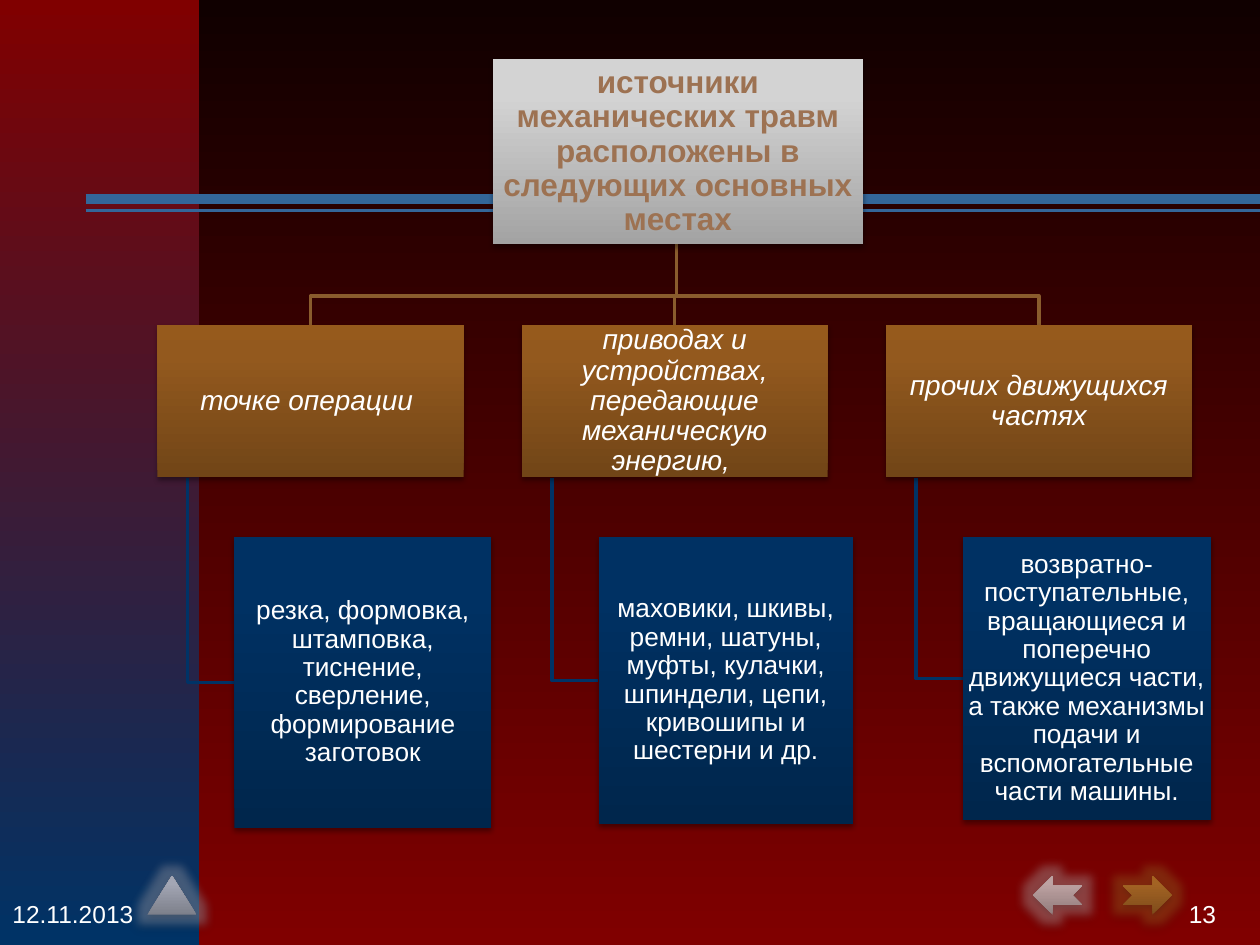
from lxml import etree
from pptx import Presentation
from pptx.dml.color import RGBColor
from pptx.enum import shapes as sh, text as tx
from pptx.oxml.ns import qn
from pptx.util import Inches, Pt

ROOT_TEXT = "источники механических травм расположены в следующих основных местах"
# place, its example sources, size of the example box
BRANCHES = [
    ("точке операции ",
     "резка, формовка, штамповка, тиснение, сверление, формирование заготовок",
     (2.04, 2.31)),
    ("приводах и устройствах, передающие механическую энергию, ",
     "маховики, шкивы, ремни, шатуны, муфты, кулачки, шпиндели, цепи, "
     "кривошипы и шестерни и др.",
     (2.02, 2.28)),
    ("прочих движущихся частях",
     "возвратно-поступательные, вращающиеся и поперечно движущиеся части, "
     "а также механизмы подачи и вспомогательные части машины.",
     (1.97, 2.25)),
]
# gradient stops, from the bottom up
SILVER = [(0, "A3A3A3"), (80, "D3D3D3"), (100, "D4D4D4")]
BROWN = [(0, "714517"), (80, "93591E"), (100, "965A1C")]
NAVY = [(0, "00264C"), (80, "003163"), (100, "003263")]
# preset, left, mirrored, gradient
NAV_BUTTONS = [
    (sh.MSO_SHAPE.NOTCHED_RIGHT_ARROW, 8.91, False,
     [(0, "7E4C1B"), (80, "A36323"), (100, "A66320")]),
    (sh.MSO_SHAPE.NOTCHED_RIGHT_ARROW, 8.2, True,
     [(0, "927C7C"), (80, "BDA2A2"), (100, "BFA2A2")]),
    (sh.MSO_SHAPE.FLOWCHART_EXTRACT, 1.17, False,
     [(0, "7D808B"), (80, "A3A6B4"), (100, "A3A7B6")]),
]

ROOT_BOX = (3.91, 0.47, 2.94, 1.47)
ROOT_CENTRE, ROOT_BOTTOM = 5.37, 1.94
FIRST_LEFT, BRANCH_STEP = 1.25, 2.89
BRANCH_TOP, BRANCH_W, BRANCH_H = 2.58, 2.43, 1.21
BUS_Y = 2.35
DETAIL_INDENT, DETAIL_TOP, STEM_INDENT = 0.61, 4.26, 0.24

prs = Presentation()
prs.slide_width, prs.slide_height = Inches(10), Inches(7.5)
slide = prs.slides.add_slide(prs.slide_layouts[6])


def rgb(color):
    return RGBColor.from_string(color)


def sub(parent, tag, **attrs):
    return etree.SubElement(parent, qn(tag), {k: str(v) for k, v in attrs.items()})


def paint_gradient(fill, element, stops, upward=True):
    fill.gradient()
    fill.gradient_angle = 90 if upward else 270
    stop_list = next(element.iter(qn("a:gsLst")))
    for old in list(stop_list):
        stop_list.remove(old)
    for pos, color in stops:
        stop = sub(stop_list, "a:gs", pos=pos * 1000)
        sub(stop, "a:srgbClr", val=color)


def add_effects(shape, glow=None):
    """Soft shadow below the shape, with an optional glow colour around it."""
    effects = shape._element.spPr.find(qn("a:effectLst"))

    def effect(tag, color, alpha, **attrs):
        node = sub(sub(effects, tag, **attrs), "a:srgbClr", val=color)
        sub(node, "a:alpha", val=alpha * 1000)

    if glow:
        effect("a:glow", glow, 40, rad=Pt(11))
    effect("a:outerShdw", "000000", 38, blurRad=Pt(3.1), dist=Pt(1.7),
           dir=90 * 60000, rotWithShape=0)


def add_block(preset, box, stops, upward=True):
    block = slide.shapes.add_shape(preset, *map(Inches, box))
    block.shadow.inherit = False
    block.line.fill.background()
    paint_gradient(block.fill, block._element, stops, upward)
    return block


def write(shape, words, size, color="FFFFFF", bold=False, italic=False,
          align=tx.PP_ALIGN.CENTER, spacing=0.9, insets=(0.01, 0.01)):
    frame = shape.text_frame
    frame.word_wrap = True
    frame.vertical_anchor = tx.MSO_ANCHOR.MIDDLE
    frame.margin_left = frame.margin_right = Inches(insets[0])
    frame.margin_top = frame.margin_bottom = Inches(insets[1])
    paragraph = frame.paragraphs[0]
    paragraph.alignment, paragraph.line_spacing = align, spacing
    run = paragraph.add_run()
    run.text = words
    font = run.font
    font.name, font.size, font.bold, font.italic = "Arial", Pt(size), bold, italic
    font.color.rgb = rgb(color)


def add_text_block(words, box, stops, size, **style):
    block = add_block(sh.MSO_SHAPE.RECTANGLE, box, stops)
    add_effects(block)
    write(block, words, size, **style)


def add_elbow(points, color):
    builder = slide.shapes.build_freeform(
        *(Inches(v) for v in points[0]), scale=1.0)
    builder.add_line_segments(
        [(Inches(x), Inches(y)) for x, y in points[1:]], close=False)
    elbow = builder.convert_to_shape()
    elbow.shadow.inherit = False
    elbow.fill.background()
    elbow.line.color.rgb, elbow.line.width = rgb(color), Pt(2)


def add_rule(y, width):
    rule = slide.shapes.add_connector(
        sh.MSO_CONNECTOR.STRAIGHT, Inches(0.68), Inches(y), Inches(10), Inches(y))
    rule.line.color.rgb, rule.line.width = rgb("336699"), Pt(width)
    sub(rule._element.spPr, "a:effectLst")


def add_footer(words, left, align):
    footer = slide.shapes.add_textbox(*map(Inches, (left, 7, 2.08, 0.5)))
    write(footer, words, 14, align=align, spacing=1.0, insets=(0.1, 0.05))


paint_gradient(slide.background.fill, slide._element,
               [(0, "100000"), (100, "800000")], upward=False)
add_block(sh.MSO_SHAPE.RECTANGLE, (0, 0, 1.58, 7.5),
          [(0, "800000"), (100, "003366")], upward=False)
add_rule(1.67, 2)
add_rule(1.58, 6)

lefts = [FIRST_LEFT + i * BRANCH_STEP for i in range(len(BRANCHES))]
for left, (_, _, (_, height)) in zip(lefts, BRANCHES):
    centre, stem = left + BRANCH_W / 2, left + STEM_INDENT
    middle = DETAIL_TOP + height / 2
    add_elbow([(stem, BRANCH_TOP + BRANCH_H), (stem, middle),
               (left + DETAIL_INDENT, middle)], "003366")
    add_elbow([(ROOT_CENTRE, ROOT_BOTTOM), (ROOT_CENTRE, BUS_Y),
               (centre, BUS_Y), (centre, BRANCH_TOP)], "8A5C2D")

add_text_block(ROOT_TEXT, ROOT_BOX, SILVER, 18, color="9D7252", bold=True)
for left, (place, sources, size) in zip(lefts, BRANCHES):
    add_text_block(place, (left, BRANCH_TOP, BRANCH_W, BRANCH_H), BROWN, 16,
                   italic=True)
    add_text_block(sources, (left + DETAIL_INDENT, DETAIL_TOP, *size), NAVY, 15)

add_footer("13", 7.67, tx.PP_ALIGN.RIGHT)
add_footer("12.11.2013", 0, tx.PP_ALIGN.LEFT)
for preset, left, mirrored, stops in NAV_BUTTONS:
    button = add_block(preset, (left, 6.95, 0.39, 0.31), stops)
    add_effects(button, glow=stops[-1][1])
    if mirrored:
        button._element.spPr.find(qn("a:xfrm")).set("flipH", "1")

prs.save("out.pptx")
